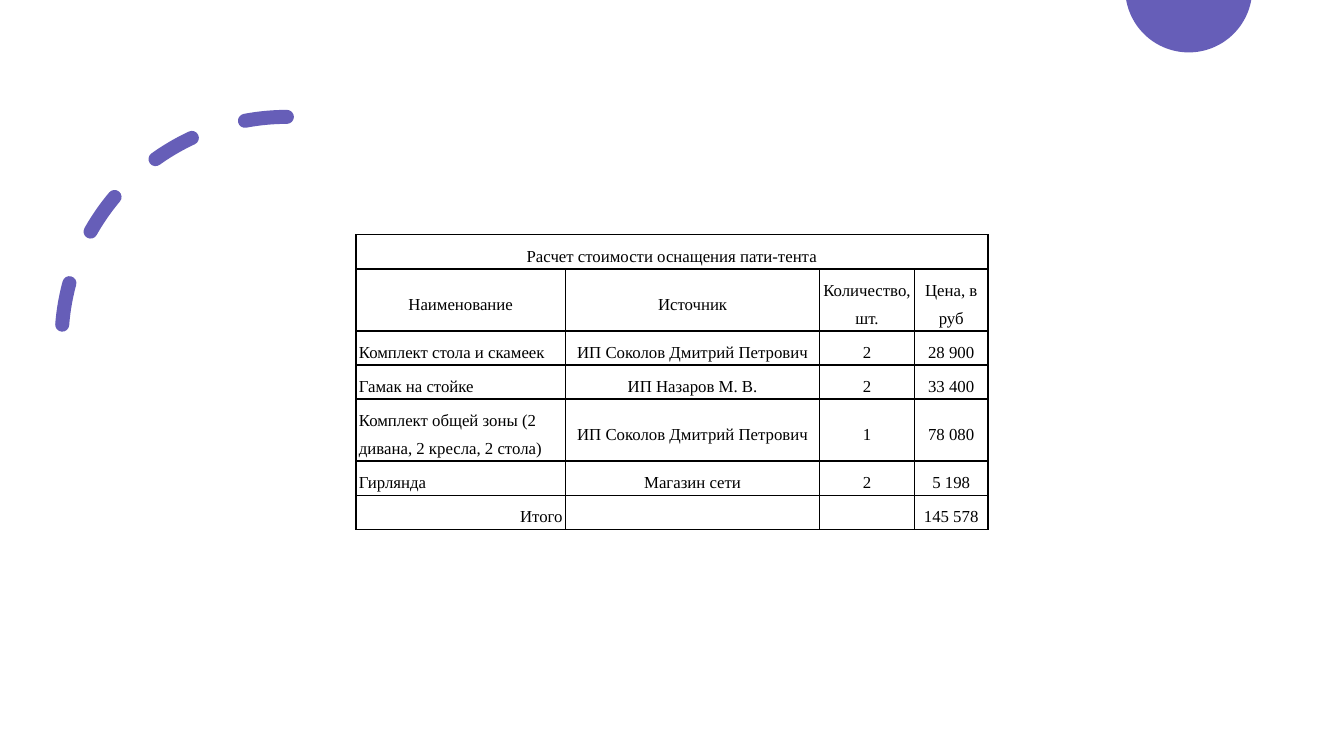
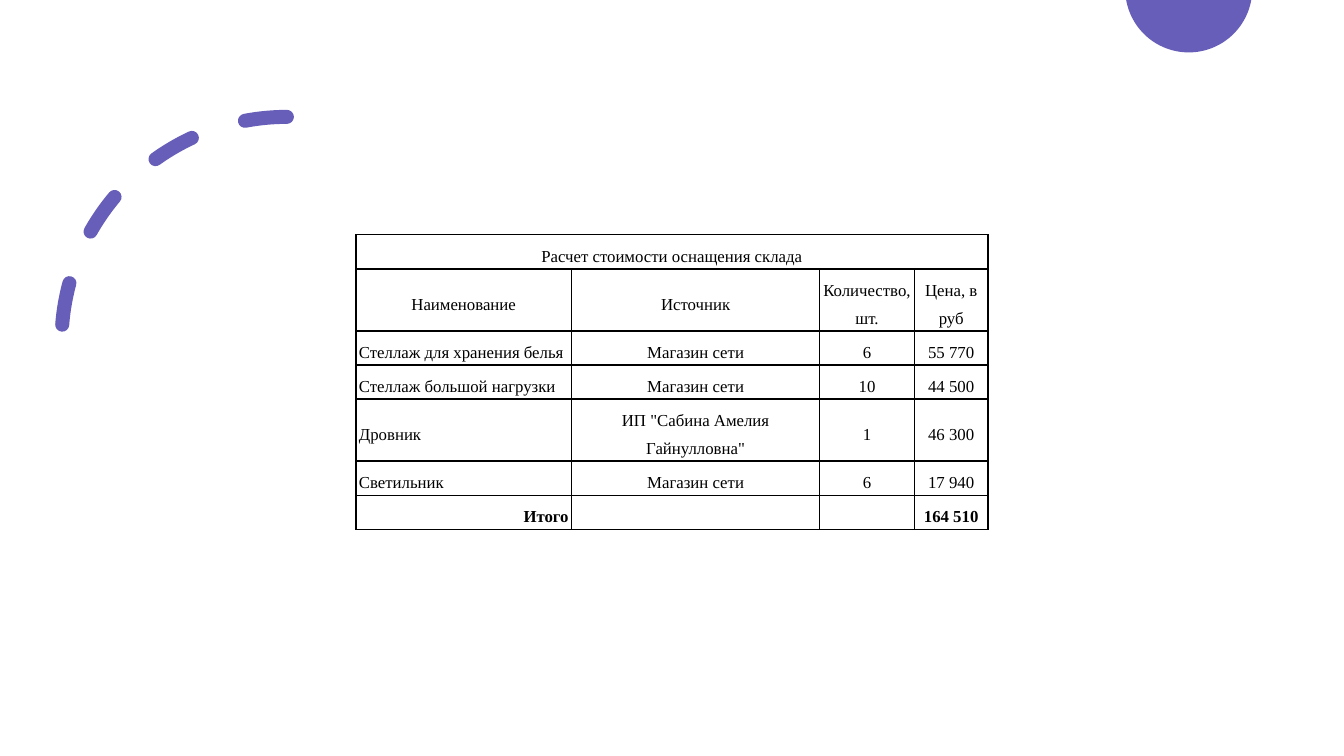
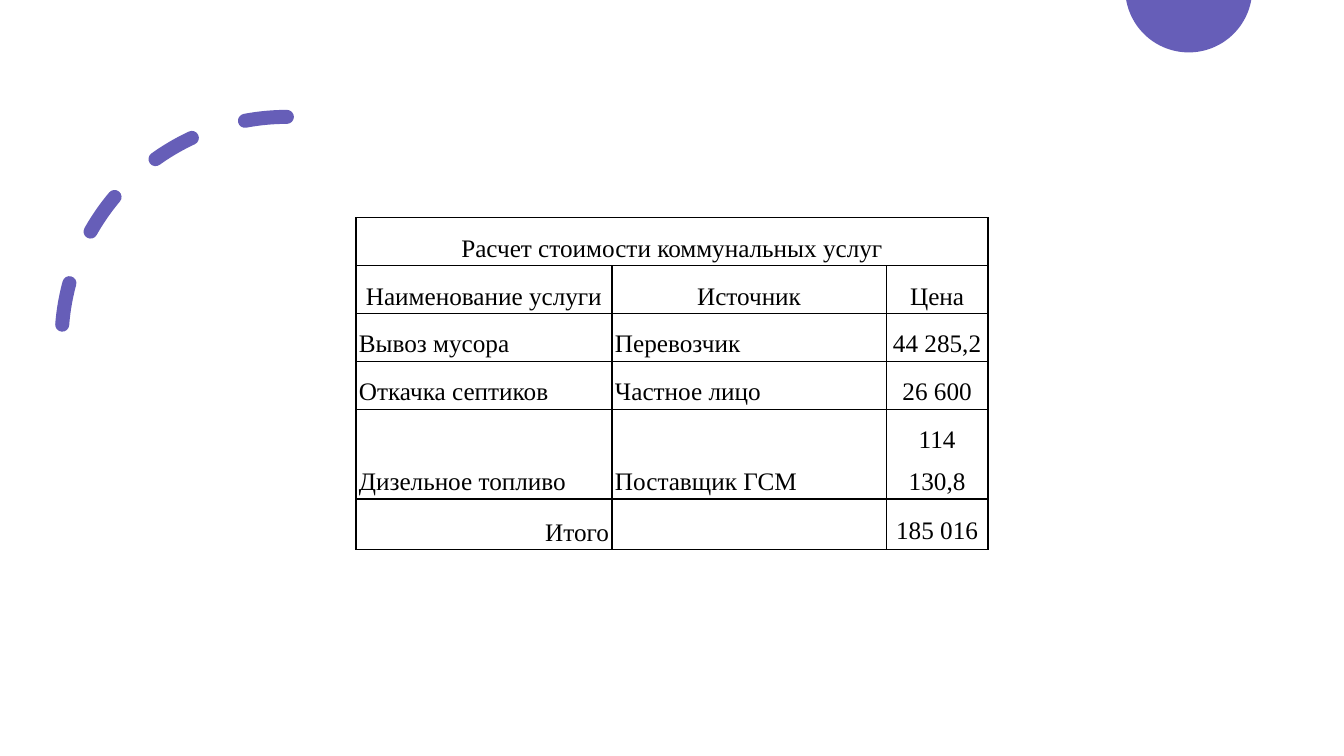
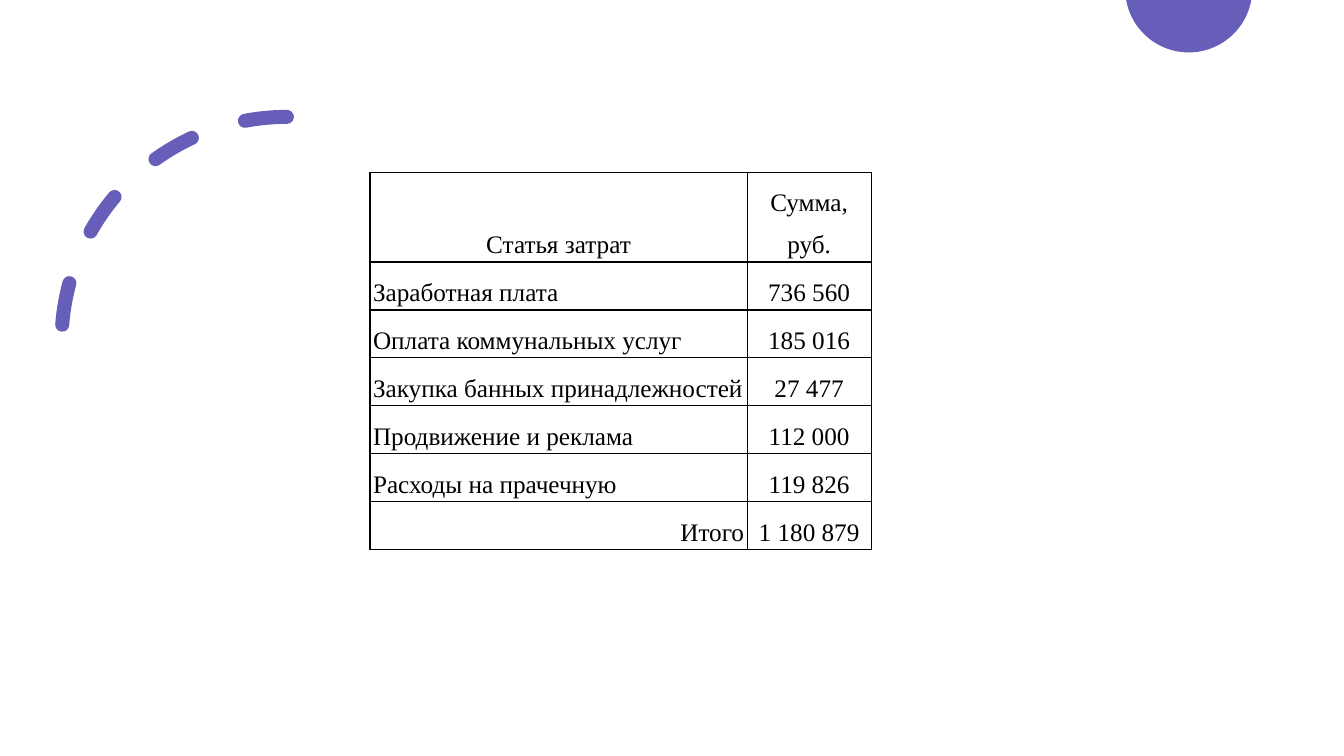
import math

from lxml import etree
from pptx import Presentation
from pptx.dml.color import RGBColor
from pptx.enum.dml import MSO_LINE
from pptx.enum.shapes import MSO_SHAPE
from pptx.enum.text import MSO_ANCHOR, PP_ALIGN
from pptx.oxml.ns import qn
from pptx.util import Inches, Pt

PURPLE = RGBColor(0x66, 0x5E, 0xB8)
BLACK = RGBColor(0x00, 0x00, 0x00)
FONT = "Times New Roman"
PLAIN_TABLE_STYLE = "{2D5ABB26-0587-4C30-8999-92F81FD0307C}"
LEFT, CENTER, RIGHT = PP_ALIGN.LEFT, PP_ALIGN.CENTER, PP_ALIGN.RIGHT
MIDDLE, BOTTOM = MSO_ANCHOR.MIDDLE, MSO_ANCHOR.BOTTOM
CELL_INSET = Inches(0.03)
SHORT_ROW, TALL_ROW = 0.33, 0.61  # one and two lines of 12 pt
BIG_ROW, BIG_TALL_ROW = 0.47, 0.88  # one and two lines of 18 pt

EQUIPMENT_HEADS = ["Наименование", "Источник", "Количество, шт.", "Цена, в руб"]
EQUIPMENT_ROWS = [SHORT_ROW, TALL_ROW, SHORT_ROW, SHORT_ROW, TALL_ROW,
                  SHORT_ROW, SHORT_ROW]

TABLES = [
    {
        "at": (3.53, 2.33), "size": 12,
        "cols": [2.08, 2.52, 0.94, 0.73], "rows": EQUIPMENT_ROWS,
        "aligns": [LEFT, CENTER, CENTER, CENTER],
        "anchors": [BOTTOM, MIDDLE, MIDDLE, MIDDLE],
        "title": "Расчет стоимости оснащения пати-тента",
        "heads": EQUIPMENT_HEADS,
        "body": [
            ["Комплект стола и скамеек", "ИП Соколов Дмитрий Петрович", "2", "28 900"],
            ["Гамак на стойке", "ИП Назаров М. В.", "2", "33 400"],
            ["Комплект общей зоны (2 дивана, 2 кресла, 2 стола)",
             "ИП Соколов Дмитрий Петрович", "1", "78 080"],
            ["Гирлянда", "Магазин сети", "2", "5 198"],
        ],
        "total": ["Итого", "", "", "145 578"],
    },
    {
        "at": (3.53, 2.33), "size": 12,
        "cols": [2.14, 2.46, 0.94, 0.73], "rows": EQUIPMENT_ROWS,
        "aligns": [LEFT, CENTER, CENTER, CENTER],
        "anchors": [MIDDLE] * 4,
        "title": "Расчет стоимости оснащения склада",
        "heads": EQUIPMENT_HEADS,
        "body": [
            ["Стеллаж для хранения белья", "Магазин сети", "6", "55 770"],
            ["Стеллаж большой нагрузки", "Магазин сети", "10", "44 500"],
            ["Дровник", "ИП \"Сабина Амелия Гайнулловна\"", "1", "46 300"],
            ["Светильник", "Магазин сети", "6", "17 940"],
        ],
        "total": ["Итого", "", "", "164 510"], "bold_total": True,
    },
    {
        "at": (3.53, 2.16), "size": 18,
        "cols": [2.54, 2.72, 1.01],
        "rows": [BIG_ROW] * 4 + [BIG_TALL_ROW, 0.5],
        "aligns": [LEFT, LEFT, CENTER],
        "anchors": [BOTTOM, BOTTOM, MIDDLE],
        "title": "Расчет стоимости коммунальных услуг",
        "heads": ["Наименование услуги", "Источник", "Цена"],
        "body": [
            ["Вывоз мусора", "Перевозчик", "44 285,2"],
            ["Откачка септиков", "Частное лицо", "26 600"],
            ["Дизельное топливо", "Поставщик ГСМ", "114 130,8"],
        ],
        "total": ["Итого", "", "185 016"],
    },
    {
        "at": (3.67, 1.71), "size": 18,
        "cols": [3.74, 1.23],
        "rows": [BIG_TALL_ROW] + [BIG_ROW] * 6,
        "aligns": [LEFT, CENTER],
        "anchors": [BOTTOM, BOTTOM], "head_anchor": BOTTOM,
        "heads": ["Статья затрат", "Сумма, руб."],
        "body": [
            ["Заработная плата", "736 560"],
            ["Оплата коммунальных услуг", "185 016"],
            ["Закупка банных принадлежностей", "27 477"],
            ["Продвижение и реклама", "112 000"],
            ["Расходы на прачечную", "119 826"],
        ],
        "total": ["Итого", "1 180 879"],
    },
]


def add_cut_circle(s, cx, cy, radius):
    """Draw the part of a circle that lies below the top edge of the slide."""
    start = math.asin(-cy / radius)
    steps = 60
    angles = [start + (math.pi - 2 * start) * i / steps for i in range(steps + 1)]
    points = [(Inches(cx + radius * math.cos(a)), Inches(cy + radius * math.sin(a)))
              for a in angles]
    builder = s.shapes.build_freeform(*points[0])
    builder.add_line_segments(points[1:], close=True)
    sp = builder.convert_to_shape()
    sp.shadow.inherit = False
    sp.fill.solid()
    sp.fill.fore_color.rgb = PURPLE
    sp.line.fill.background()
    return sp


def add_dashed_arc(s, left, top, size):
    sp = s.shapes.add_shape(MSO_SHAPE.ARC, Inches(left), Inches(top),
                            Inches(size), Inches(size))
    sp.shadow.inherit = False
    sp.fill.background()
    sp.line.color.rgb = PURPLE
    sp.line.width = Pt(10)
    sp.line.dash_style = MSO_LINE.DASH
    sp.rotation = 180
    sp.element.spPr.find(qn("a:xfrm")).set("flipV", "1")
    sp.element.spPr.find(qn("a:ln")).set("cap", "rnd")
    return sp


def decorate_layout(layout, s):
    """Draw the shared decoration on a slide and move it to the layout."""
    for sp in (add_cut_circle(s, 11.79, -0.11, 0.63),
               add_dashed_arc(s, 0.61, 1.16, 4.47)):
        layout.shapes.element.append(sp.element)


def set_borders(cell):
    tc_pr = cell._tc.get_or_add_tcPr()
    for side in ("a:lnL", "a:lnR", "a:lnT", "a:lnB"):
        ln = etree.SubElement(tc_pr, qn(side), w=str(Pt(1)))
        fill = etree.SubElement(ln, qn("a:solidFill"))
        etree.SubElement(fill, qn("a:srgbClr"), val=str(BLACK))


def fill_cell(cell, text, size, align, anchor, bold=False):
    cell_format = {"vertical_anchor": anchor}
    for side in ("left", "right", "top", "bottom"):
        cell_format["margin_" + side] = CELL_INSET
    for name, value in cell_format.items():
        setattr(cell, name, value)
    set_borders(cell)
    cell.fill.background()
    p = cell.text_frame.paragraphs[0]
    p.alignment = align
    p.line_spacing = 1.5
    r = p.add_run()
    r.text = text
    for name, value in {"name": FONT, "size": Pt(size), "bold": bold}.items():
        setattr(r.font, name, value)
    r.font.color.rgb = BLACK


def add_cost_table(s, spec_data):
    cols, rows, size = spec_data["cols"], spec_data["rows"], spec_data["size"]
    left, top = spec_data["at"]
    frame = s.shapes.add_table(len(rows), len(cols), Inches(left), Inches(top),
                               Inches(sum(cols)), Inches(sum(rows)))
    frame.element.find(".//" + qn("a:tableStyleId")).text = PLAIN_TABLE_STYLE
    table = frame.table
    table.first_row = table.horz_banding = False
    for column, width in zip(table.columns, cols):
        column.width = Inches(width)
    for row, height in zip(table.rows, rows):
        row.height = Inches(height)

    # Title across all columns, then the column heads
    heads = [spec_data["heads"]]
    if "title" in spec_data:
        heads.insert(0, [spec_data["title"]] + [""] * (len(cols) - 1))
    head_anchor = spec_data.get("head_anchor", MIDDLE)
    for i, texts in enumerate(heads):
        for j, text in enumerate(texts):
            fill_cell(table.cell(i, j), text, size, CENTER, head_anchor)
    if "title" in spec_data:
        table.cell(0, 0).merge(table.cell(0, len(cols) - 1))

    # Body
    for i, texts in enumerate(spec_data["body"], len(heads)):
        for j, text in enumerate(texts):
            fill_cell(table.cell(i, j), text, size,
                      spec_data["aligns"][j], spec_data["anchors"][j])

    # Total
    bold = spec_data.get("bold_total", False)
    for j, text in enumerate(spec_data["total"]):
        align, anchor = (CENTER, spec_data["anchors"][j]) if j else (RIGHT, BOTTOM)
        fill_cell(table.cell(len(rows) - 1, j), text, size, align, anchor, bold)


def main():
    prs = Presentation()
    prs.slide_width, prs.slide_height = Inches(13.33), Inches(7.5)
    layout = prs.slide_layouts[6]
    slides = [prs.slides.add_slide(layout) for _ in TABLES]
    decorate_layout(layout, slides[0])
    for s, spec_data in zip(slides, TABLES):
        add_cost_table(s, spec_data)
    prs.save("out.pptx")


if __name__ == "__main__":
    main()
